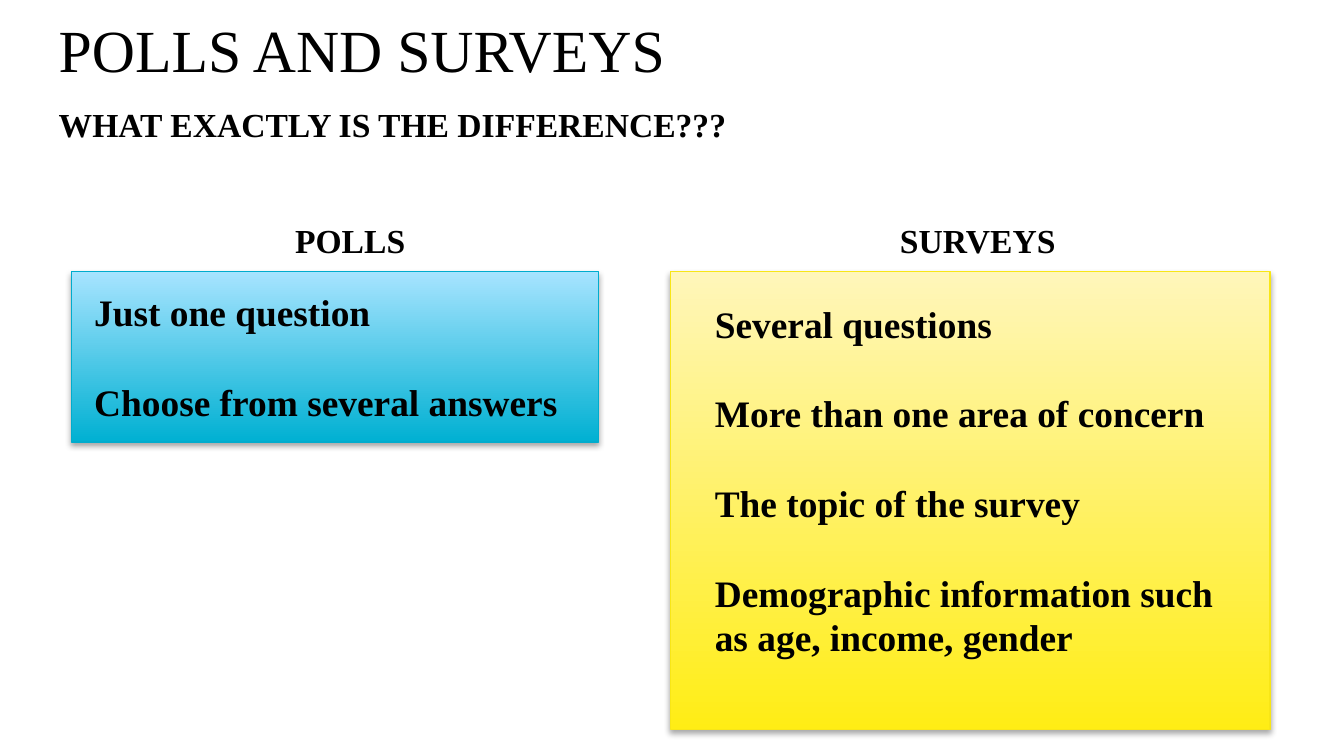
from lxml.etree import SubElement
from pptx import Presentation
from pptx.dml.color import RGBColor
from pptx.enum.shapes import MSO_SHAPE as Shape
from pptx.enum.text import MSO_ANCHOR as Anchor, MSO_AUTO_SIZE as AutoSize, PP_ALIGN as Align
from pptx.oxml.ns import qn
from pptx.util import Cm, Pt

FONT = "Times New Roman"
MARGIN_LEFT, CONTENT_WIDTH = 0.86, 23.67
PANEL_TOP = 5.13
HEADING_TOP, HEADING_WIDTH, HEADING_HEIGHT = 4.03, 5, 1


def rgb(hex_colour):
    return RGBColor.from_string(hex_colour)


def place(item, left, top, width, height):
    item.left, item.top = Cm(left), Cm(top)
    item.width, item.height = Cm(width), Cm(height)


def write(frame, lines, size, bold=False, spacing=1.0, gap=0, align=Align.LEFT,
          anchor=Anchor.TOP, insets=(0.25, 0.25), autofit=AutoSize.NONE):
    """Fill a text frame; gap is the space in points between paragraphs."""
    frame.word_wrap = True
    frame.auto_size = autofit
    frame.vertical_anchor = anchor
    horizontal, vertical = insets
    frame.margin_left = frame.margin_right = Cm(horizontal)
    frame.margin_top = frame.margin_bottom = Cm(vertical)
    for index, line in enumerate(lines):
        paragraph = frame.paragraphs[0] if index == 0 else frame.add_paragraph()
        paragraph.alignment = align
        paragraph.line_spacing = spacing
        paragraph.space_before = Pt(gap if index else 0)
        paragraph.space_after = Pt(0)
        run = paragraph.add_run()
        run.text = line
        run.font.name, run.font.size, run.font.bold = FONT, Pt(size), bold
        run.font.color.rgb = rgb("000000")


def remove_bullet(paragraph):
    properties = paragraph._p.get_or_add_pPr()
    properties.set("marL", "0")
    properties.set("indent", "0")
    SubElement(properties, qn("a:buNone"))


def add_heading(slide, label, centre):
    heading = slide.shapes.add_textbox(Cm(centre - HEADING_WIDTH / 2), Cm(HEADING_TOP),
                                       Cm(HEADING_WIDTH), Cm(HEADING_HEIGHT))
    write(heading.text_frame, [label], 18, bold=True, align=Align.CENTER,
          insets=(0.25, 0.13))


def add_soft_shadow(panel):
    panel.shadow.inherit = False
    effects = panel._element.spPr.find(qn("a:effectLst"))
    shadow = SubElement(effects, qn("a:outerShdw"), blurRad=str(Pt(3.1)),
                        dist=str(Pt(1.8)), dir="5400000", rotWithShape="0")
    black = SubElement(shadow, qn("a:srgbClr"), val="000000")
    SubElement(black, qn("a:alpha"), val="35000")


def add_panel(slide, left, width, height, bottom_colour, top_colour, border):
    panel = slide.shapes.add_shape(Shape.RECTANGLE, Cm(left), Cm(PANEL_TOP),
                                   Cm(width), Cm(height))
    panel.fill.gradient()
    panel.fill.gradient_angle = 90
    for stop, colour in zip(panel.fill.gradient_stops, (bottom_colour, top_colour)):
        stop.color.rgb = rgb(colour)
    panel.line.color.rgb = rgb(border)
    panel.line.width = Pt(0.75)
    add_soft_shadow(panel)
    return panel


def main():
    deck = Presentation()
    deck.slide_width, deck.slide_height = Cm(25.4), Cm(14.29)
    slide = deck.slides.add_slide(deck.slide_layouts[1])

    title, body = slide.placeholders
    place(title, MARGIN_LEFT, 0, CONTENT_WIDTH, 1.6)
    write(title.text_frame, ["POLLS AND SURVEYS"], 32)

    place(body, MARGIN_LEFT, 1.6, CONTENT_WIDTH, 12.45)
    write(body.text_frame, ["WHAT EXACTLY IS THE DIFFERENCE???"], 18, bold=True, spacing=1.15)
    remove_bullet(body.text_frame.paragraphs[0])

    for label, centre in (("POLLS", 6.62), ("SURVEYS", 18.48)):
        add_heading(slide, label, centre)

    list_format = dict(size=20, bold=True, gap=24)
    polls = add_panel(slide, 1.35, 9.96, 3.23, "00B0D2", "A7E4FF", "00ACCD")
    write(polls.text_frame, ["Just one question", "Choose from several answers"],
          anchor=Anchor.MIDDLE, insets=(0.43, 0.13), **list_format)

    add_panel(slide, 12.67, 11.33, 8.66, "FFED15", "FFF6BA", "F8E616")
    survey_points = slide.shapes.add_textbox(Cm(13.26), Cm(5.56), Cm(10.06), Cm(7.09))
    write(survey_points.text_frame,
          ["Several questions", "More than one area of concern", "The topic of the survey",
           "Demographic information such as age, income, gender"],
          insets=(0.25, 0.13), autofit=AutoSize.SHAPE_TO_FIT_TEXT, **list_format)

    deck.save("out.pptx")


if __name__ == "__main__":
    main()
